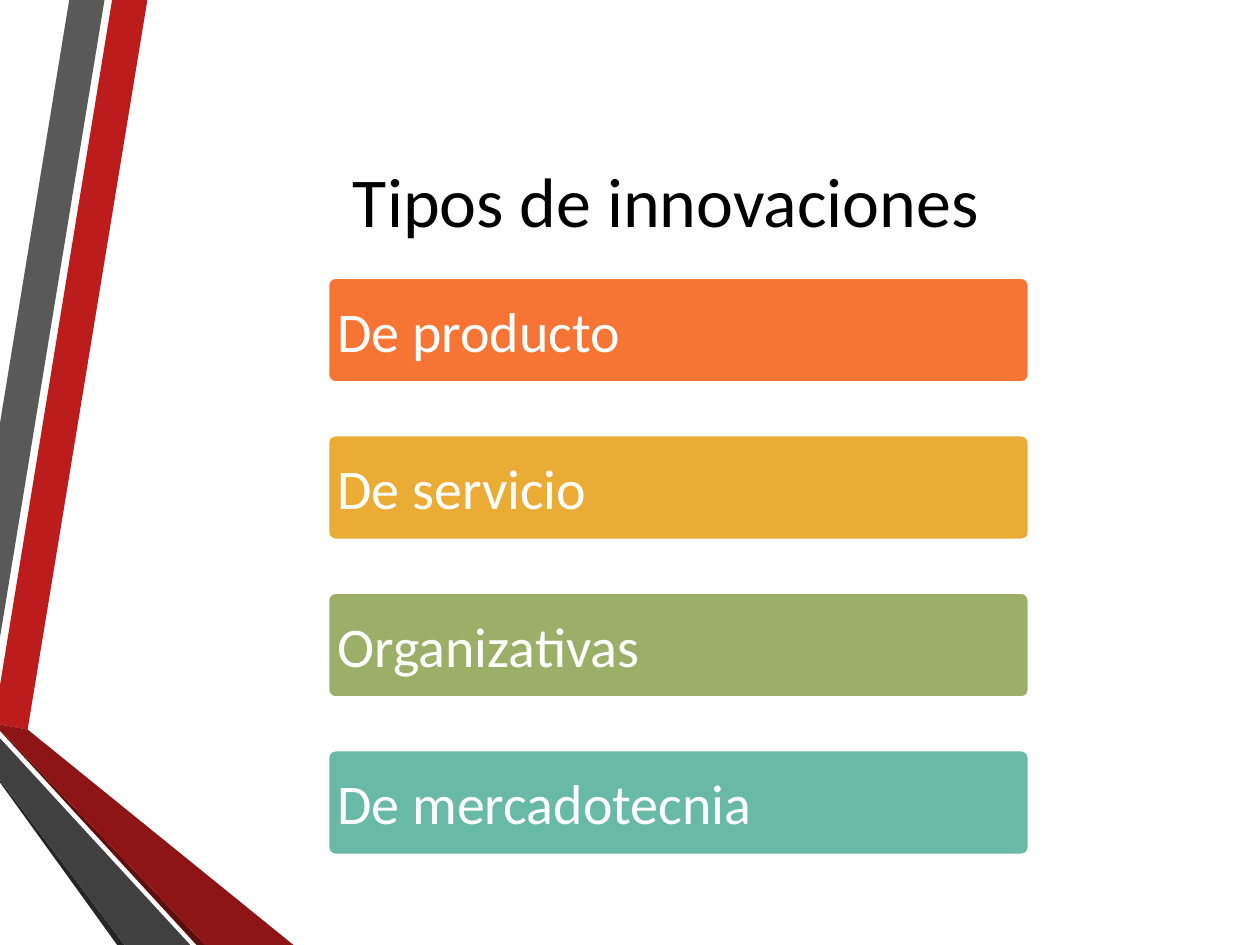
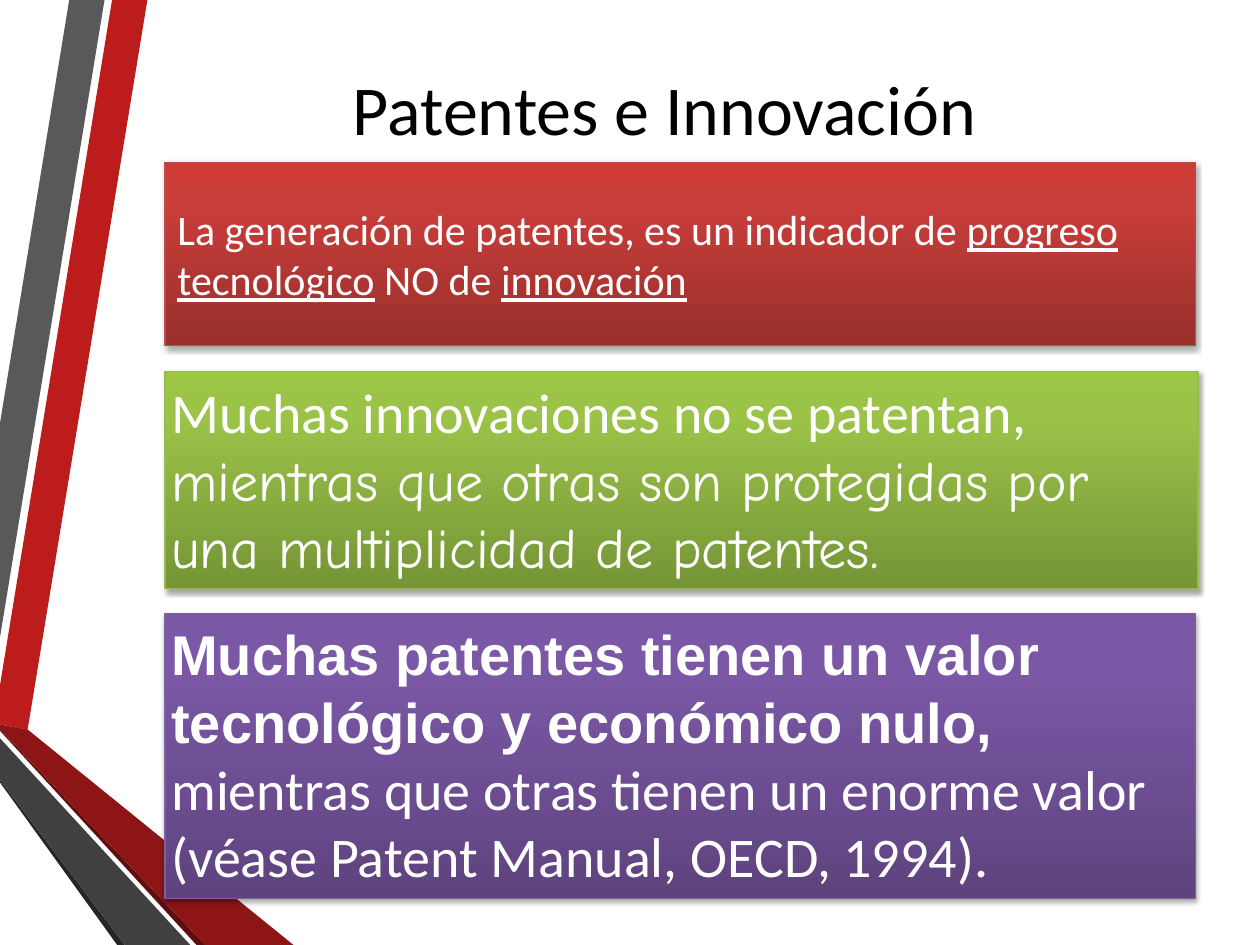
from copy import deepcopy
from dataclasses import dataclass

from lxml.etree import SubElement
from pptx import Presentation
from pptx.dml.color import RGBColor
from pptx.enum.shapes import MSO_SHAPE as Shape
from pptx.enum.text import MSO_ANCHOR as Anchor, PP_ALIGN as Align
from pptx.oxml.ns import qn
from pptx.util import Pt

PX = 9144  # 100 px to the inch
WIDTH, HEIGHT = 1000, 750

BLACK = RGBColor(0x00, 0x00, 0x00)
WHITE = RGBColor(0xFF, 0xFF, 0xFF)
ORANGE = RGBColor(0xF6, 0x75, 0x34)
AMBER = RGBColor(0xEA, 0xAC, 0x35)
OLIVE = RGBColor(0x9B, 0xAF, 0x68)
TEAL = RGBColor(0x68, 0xB9, 0xA6)
RIBBON_RED = RGBColor(0xBC, 0x1C, 0x1C)
RIBBON_GRAY = RGBColor(0x59, 0x59, 0x59)
EDGE_GRAY = RGBColor(0x26, 0x26, 0x26)
EDGE_RED = RGBColor(0x5E, 0x0E, 0x0E)
FOLD_RED = RGBColor(0x8D, 0x15, 0x15)
FOLD_GRAY = RGBColor(0x40, 0x40, 0x40)

# Gradient colours from bottom to top, then the outline
RED_PANEL = (RGBColor(0x9A, 0x2F, 0x2C), RGBColor(0xCA, 0x3E, 0x3A),
             RGBColor(0xCE, 0x3B, 0x37), RGBColor(0xBE, 0x4B, 0x48))
GREEN_PANEL = (RGBColor(0x76, 0x95, 0x37), RGBColor(0x9B, 0xC3, 0x48),
               RGBColor(0x9C, 0xC6, 0x46), RGBColor(0x98, 0xB9, 0x55))
PURPLE_PANEL = (RGBColor(0x5E, 0x43, 0x7E), RGBColor(0x7B, 0x58, 0xA6),
                RGBColor(0x7B, 0x57, 0xA8), RGBColor(0x7D, 0x60, 0xA0))
GRADIENT_STOPS = (0, 0.8, 1)

# Folded ribbons on the left edge of every slide
RIBBONS = [
    (RIBBON_RED, [(0, 544), (0, 575), (22, 579), (117, 0), (89, 0)]),
    (RIBBON_GRAY, [(83, 0), (55, 0), (0, 336), (0, 506)]),
    (EDGE_GRAY, [(0, 619), (0, 621), (93, 750), (99, 750)]),
    (EDGE_RED, [(0, 579), (0, 580), (156, 750), (163, 750)]),
    (FOLD_RED, [(0, 579), (163, 750), (233, 750), (22, 579), (0, 575)]),
    (FOLD_GRAY, [(0, 619), (99, 750), (151, 750), (0, 586)]),
]

INNOVATION_TYPES = [
    ("De producto", ORANGE),
    ("De servicio", AMBER),
    ("Organizativas", OLIVE),
    ("De mercadotecnia", TEAL),
]
BAND_TOP, BAND_PITCH = 220, 125


@dataclass
class Words:
    """A stretch of text in one style."""

    text: str
    font: str = "Calibri"
    bold: bool = False
    underline: bool = False


class SlideMaker:
    """Holds the shared style and the current slide."""

    def __init__(self):
        self.deck = Presentation()
        self.deck.slide_width = WIDTH * PX
        self.deck.slide_height = HEIGHT * PX
        self.page = None

    def new_page(self, title, title_left, title_top):
        self.page = self.deck.slides.add_slide(self.deck.slide_layouts[6])
        for color, points in RIBBONS:
            self.ribbon(color, points)
        self.title(title, title_left, title_top)

    def ribbon(self, color, points):
        builder = self.page.shapes.build_freeform(*points[0], scale=PX)
        builder.add_line_segments(points[1:], close=True)
        ribbon = builder.convert_to_shape()
        ribbon.shadow.inherit = False
        ribbon.fill.solid()
        ribbon.fill.fore_color.rgb = color
        ribbon.line.fill.background()

    def title(self, text, left, top):
        box = self.page.shapes.add_textbox(left * PX, top * PX, 843 * PX, 217 * PX)
        para = self.set_text(box, [Words(text)], 40, BLACK, Anchor.MIDDLE)
        para.alignment = Align.CENTER

    def shape(self, kind, left, top, width, height, outline, weight):
        shape = self.page.shapes.add_shape(
            kind, left * PX, top * PX, width * PX, height * PX)
        shape.shadow.inherit = False
        shape.line.color.rgb = outline
        shape.line.width = Pt(weight)
        return shape

    def band(self, text, top, color):
        band = self.shape(Shape.ROUNDED_RECTANGLE, 260, top, 557, 84, WHITE, 2)
        band.adjustments[0] = 0.075
        band.fill.solid()
        band.fill.fore_color.rgb = color
        self.set_text(band, [Words(text)], 32, WHITE, Anchor.MIDDLE, 6)

    def panel(self, parts, top, width, height, colors, size=32,
              anchor=Anchor.TOP, inset=5):
        *shades, outline = colors
        panel = self.shape(Shape.RECTANGLE, 131, top, width, height, outline, 0.75)
        self.shade(panel, shades)
        self.drop_shadow(panel)
        return self.set_text(panel, parts, size, WHITE, anchor, inset)

    def shade(self, shape, shades):
        shape.fill.gradient()
        shape.fill.gradient_angle = 90
        stop_list = shape._element.spPr.find(qn("a:gradFill")).find(qn("a:gsLst"))
        stop_list.append(deepcopy(stop_list[-1]))
        for stop, place, color in zip(shape.fill.gradient_stops, GRADIENT_STOPS, shades):
            stop.position = place
            stop.color.rgb = color

    def drop_shadow(self, shape):
        effects = shape._element.spPr.find(qn("a:effectLst"))
        shadow = SubElement(effects, qn("a:outerShdw"), blurRad=str(Pt(3)),
                            dist=str(Pt(1.8)), dir="5400000", rotWithShape="0")
        color = SubElement(shadow, qn("a:srgbClr"), val=str(BLACK))
        SubElement(color, qn("a:alpha"), val="35000")

    def set_text(self, box, parts, size, color, anchor, inset=10):
        frame = box.text_frame
        frame.word_wrap = True
        frame.vertical_anchor = anchor
        frame.margin_left = frame.margin_right = inset * PX
        frame.margin_top = frame.margin_bottom = 5 * PX
        para = frame.paragraphs[0]
        para.alignment = Align.LEFT
        for words in parts:
            span = para.add_run()
            span.text = words.text
            span.font.name = words.font
            span.font.size = Pt(size)
            span.font.color.rgb = color
            span.font.bold = words.bold
            span.font.underline = words.underline
        return para


def main():
    maker = SlideMaker()

    # Types of innovation
    maker.new_page("Tipos de innovaciones", 107, 50)
    for row, (text, color) in enumerate(INNOVATION_TYPES):
        maker.band(text, BAND_TOP + row * BAND_PITCH, color)

    # Patents and innovation
    maker.new_page("Patentes e Innovación", 106, -23)
    para = maker.panel(
        [Words("La generación de patentes, es un indicador de "),
         Words("progreso tecnológico", underline=True),
         Words(" NO de "),
         Words("innovación", underline=True)],
        129, 818, 145, RED_PANEL, 24, Anchor.MIDDLE, 10)
    para.space_before = Pt(5)
    para.space_after = Pt(6)
    maker.panel(
        [Words("Muchas innovaciones no se patentan, "),
         Words("mientras que otras son protegidas por una multiplicidad de patentes.",
               font="Comic Neue")],
        295, 820, 172, GREEN_PANEL)
    maker.panel(
        [Words("Muchas patentes tienen un valor tecnológico y económico nulo,",
               font="Arial", bold=True),
         Words(" mientras que otras tienen un enorme valor "
               "(véase Patent Manual, OECD, 1994).")],
        487, 818, 226, PURPLE_PANEL)

    maker.deck.save("out.pptx")


if __name__ == "__main__":
    main()
